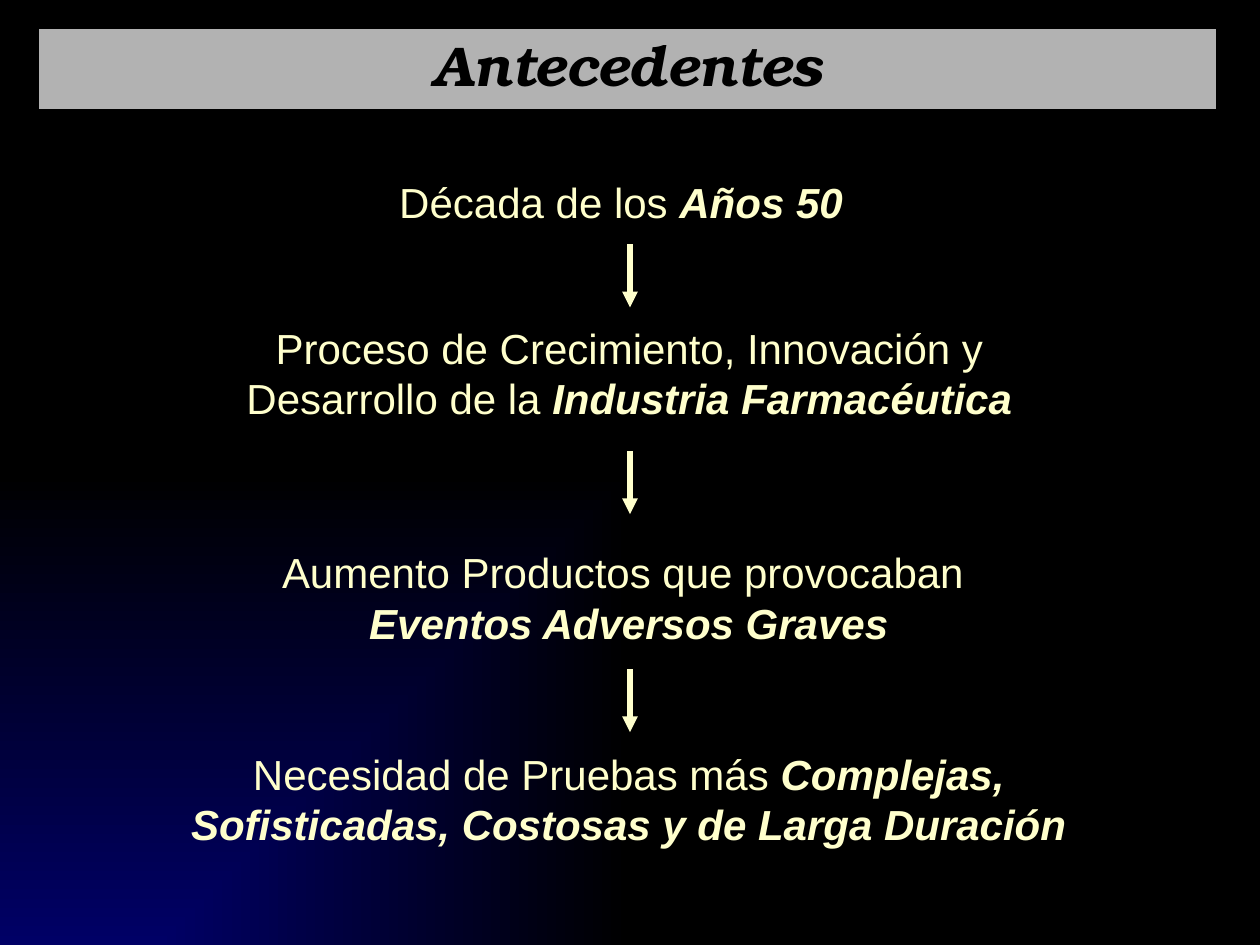
from lxml.etree import SubElement
from pptx import Presentation
from pptx.dml.color import RGBColor
from pptx.enum.shapes import MSO_CONNECTOR
from pptx.enum.text import MSO_ANCHOR, MSO_AUTO_SIZE, PP_ALIGN
from pptx.oxml.ns import qn
from pptx.util import Inches, Pt

NAVY = RGBColor(0x00, 0x00, 0x66)
BLACK = RGBColor(0x00, 0x00, 0x00)
GRAY = RGBColor(0xB2, 0xB2, 0xB2)
CREAM = RGBColor(0xFF, 0xFF, 0xCC)

# Content: each step is (left, top, width, height), wrap, paragraphs of (text, emphasized)
TITLE = "Antecedentes"
STEPS = [
    ((3.07, 1.35, 3.82, 0.5), False,
     [[("Década de los ", False), ("Años 50", True)]]),
    ((1.78, 2.51, 6.43, 0.9), True,
     [[("Proceso de Crecimiento, Innovación y Desarrollo de la ", False),
       ("Industria Farmacéutica", True)]]),
    ((1.82, 4.29, 6.34, 0.9), True,
     [[("Aumento Productos que provocaban ", False)],
      [("Eventos Adversos Graves", True)]]),
    ((1.2, 5.89, 7.58, 0.9), True,
     [[("Necesidad de Pruebas más ", False),
       ("Complejas, Sofisticadas, Costosas y de Larga Duración", True)]]),
]
ARROW_X, ARROW_LENGTH = 5, 0.5
ARROW_TOPS = [1.94, 3.58, 5.31]


def set_background(s):
    """Gradient that spreads from the bottom left corner."""
    fill = s.background.fill
    fill.gradient()
    for stop, color in zip(fill.gradient_stops, (NAVY, BLACK)):
        stop.color.rgb = color
    grad = s.element.find(".//" + qn("a:gradFill"))
    grad.remove(grad.find(qn("a:lin")))
    spread = SubElement(grad, qn("a:path"), path="rect")
    SubElement(spread, qn("a:fillToRect"), t="100000", r="100000")


def add_title(s):
    sp = s.shapes.title
    sp.left, sp.top, sp.width, sp.height = map(Inches, (0.27, 0.19, 9.42, 0.72))
    sp.fill.solid()
    sp.fill.fore_color.rgb = GRAY
    sp.line.color.rgb = BLACK
    sp.line.width = Pt(6)
    tf = sp.text_frame
    tf.text = TITLE
    tf.vertical_anchor = MSO_ANCHOR.TOP
    tf.auto_size = MSO_AUTO_SIZE.NONE
    p = tf.paragraphs[0]
    p.alignment = PP_ALIGN.CENTER
    p.font.name, p.font.size = "TeX Gyre Bonum", Pt(32)
    p.font.bold = p.font.italic = True
    p.font.color.rgb = BLACK


def add_step(s, box, wrap, paragraphs):
    tf = s.shapes.add_textbox(*map(Inches, box)).text_frame
    tf.word_wrap = wrap
    tf.auto_size = MSO_AUTO_SIZE.SHAPE_TO_FIT_TEXT
    for i, runs in enumerate(paragraphs):
        p = tf.add_paragraph() if i else tf.paragraphs[0]
        p.alignment = PP_ALIGN.CENTER if wrap else PP_ALIGN.LEFT
        p.font.name, p.font.size = "Arial", Pt(24)
        p.font.color.rgb = CREAM
        for text, emphasized in runs:
            r = p.add_run()
            r.text = text
            if emphasized:
                r.font.bold = r.font.italic = True


def add_arrow(s, top):
    x = Inches(ARROW_X)
    arrow = s.shapes.add_connector(
        MSO_CONNECTOR.STRAIGHT, x, Inches(top), x, Inches(top + ARROW_LENGTH))
    arrow.line.color.rgb = CREAM
    arrow.line.width = Pt(3)
    SubElement(arrow.line._get_or_add_ln(), qn("a:tailEnd"), type="triangle")
    SubElement(arrow._element.spPr, qn("a:effectLst"))


def main():
    prs = Presentation()
    prs.slide_width, prs.slide_height = Inches(10), Inches(7.5)
    s = prs.slides.add_slide(prs.slide_layouts[5])  # title only
    set_background(s)
    add_title(s)
    for step in STEPS:
        add_step(s, *step)
    for top in ARROW_TOPS:
        add_arrow(s, top)
    prs.save("out.pptx")


if __name__ == "__main__":
    main()
